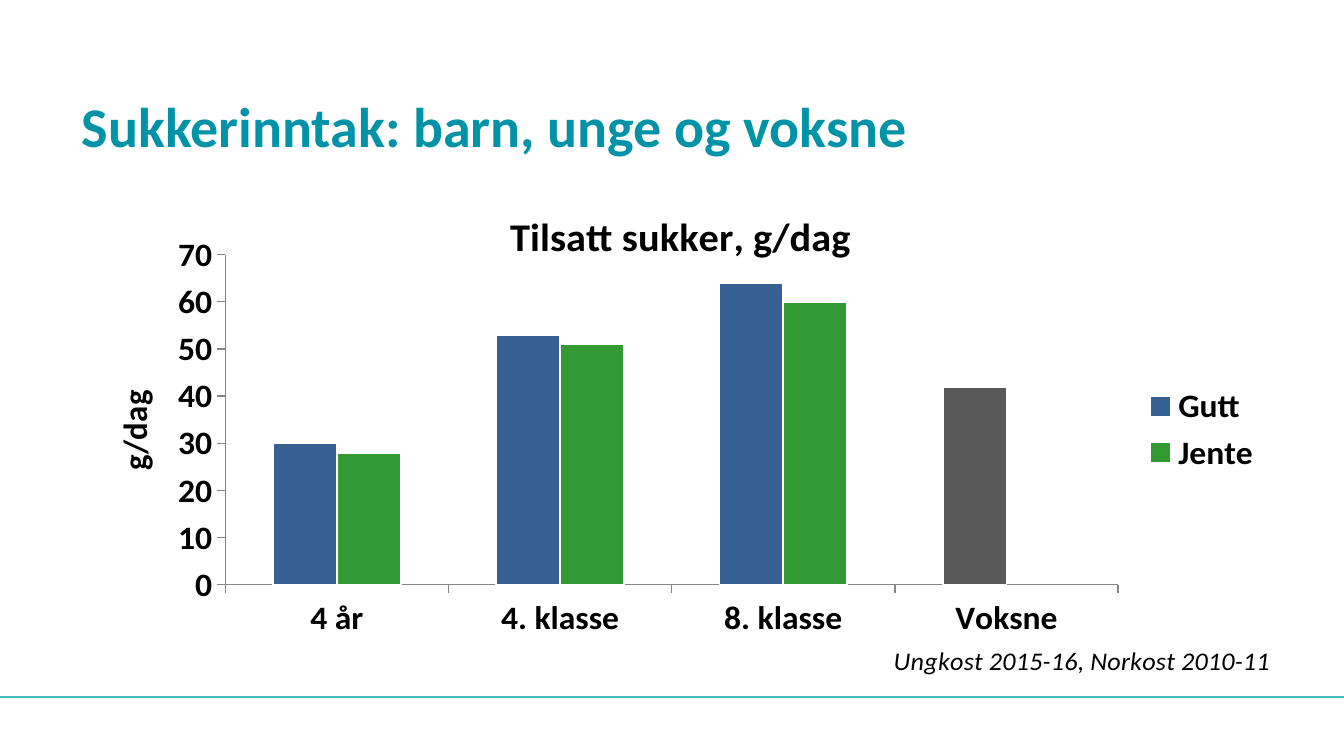
"""Build a slide with a column chart of added sugar intake by age group."""
from lxml.etree import SubElement
from pptx import Presentation
from pptx.chart.data import CategoryChartData as ChartData
from pptx.dml.color import RGBColor
from pptx.enum.chart import XL_CHART_TYPE as ChartType
from pptx.enum.chart import XL_LEGEND_POSITION as LegendPosition
from pptx.enum.chart import XL_TICK_MARK as TickMark
from pptx.enum.shapes import MSO_CONNECTOR as Connector
from pptx.enum.text import MSO_ANCHOR as Anchor
from pptx.enum.text import PP_ALIGN as Align
from pptx.oxml.ns import qn
from pptx.util import Pt

TEAL = RGBColor(0x00, 0x93, 0xA7)
TURQUOISE = RGBColor(0x43, 0xBC, 0xBA)
BLACK = RGBColor(0x00, 0x00, 0x00)
WHITE = RGBColor(0xFF, 0xFF, 0xFF)
AXIS_GREY = RGBColor(0x86, 0x86, 0x86)
BOY_BLUE = RGBColor(0x37, 0x60, 0x92)
GIRL_GREEN = RGBColor(0x33, 0x99, 0x33)
ADULT_GREY = RGBColor(0x59, 0x59, 0x59)

WIDTH, HEIGHT = 720, 405
GROUPS = ["4 år", "4. klasse", "8. klasse", "Voksne"]
SERIES = [
    ("Gutt", (30, 53, 64, 42), BOY_BLUE),
    ("Jente", (28, 51, 60, None), GIRL_GREEN),
]


def style_font(font, size=18, color=BLACK, bold=True, italic=False):
    font.name, font.size = "Calibri", Pt(size)
    font.bold, font.italic = bold, italic
    font.color.rgb = color


def write_text(frame, text, align=None, **style):
    para = frame.paragraphs[0]
    para.alignment = align
    span = para.add_run()
    span.text = text
    style_font(span.font, **style)


def set_layout(parent, index, **values):
    for old in parent.findall(qn("c:layout")):
        parent.remove(old)
    layout = SubElement(parent, qn("c:layout"))
    parent.insert(index, layout)
    manual = SubElement(layout, qn("c:manualLayout"))
    for name, value in values.items():
        SubElement(manual, qn(f"c:{name}")).set("val", str(value))


class SlideBuilder:
    def __init__(self, deck):
        self.page = deck.slides.add_slide(deck.slide_layouts[5])

    def rule(self, y, color):
        line = self.page.shapes.add_connector(
            Connector.STRAIGHT, Pt(0), Pt(y), Pt(WIDTH), Pt(y))
        line.line.color.rgb, line.line.width = color, Pt(1)
        SubElement(line.element.spPr, qn("a:effectLst"))

    def title(self, text, left, top, width, height):
        box = self.page.shapes.title
        box.left, box.top, box.width, box.height = map(
            Pt, (left, top, width, height))
        box.text_frame.vertical_anchor = Anchor.BOTTOM
        write_text(box.text_frame, text, Align.LEFT, size=30, color=TEAL)

    def chart_title(self, title, text, x, y, **style):
        write_text(title.text_frame, text, **style)
        set_layout(title.element, 1, xMode="edge", yMode="edge", x=x, y=y)

    def axis(self, axis):
        axis.has_major_gridlines = False
        axis.major_tick_mark = TickMark.OUTSIDE
        axis.minor_tick_mark = TickMark.NONE
        axis.format.line.color.rgb = AXIS_GREY
        axis.format.line.width = Pt(0.75)

    def column_chart(self, left, top, width, height):
        data = ChartData()
        data.categories = GROUPS
        for name, values, _ in SERIES:
            data.add_series(name, values)
        chart = self.page.shapes.add_chart(
            ChartType.COLUMN_CLUSTERED,
            *map(Pt, (left, top, width, height)), data).chart
        style_font(chart.font)
        plot = chart.plots[0]
        plot.gap_width, plot.overlap = 150, 0
        plot.vary_by_categories = False
        for series, (_, _, color) in zip(plot.series, SERIES):
            self.column_format(series.format, color)
        self.column_format(plot.series[0].points[3].format, ADULT_GREY)

        for axis in (chart.category_axis, chart.value_axis):
            self.axis(axis)
        scale = chart.value_axis
        scale.minimum_scale, scale.maximum_scale, scale.major_unit = 0, 70, 10
        chart.has_legend = True
        chart.legend.position = LegendPosition.RIGHT
        chart.legend.include_in_layout = False

        self.chart_title(chart.chart_title, "Tilsatt sukker, g/dag",
                         0.36, 0.03, size=21.6)
        self.chart_title(scale.axis_title, "g/dag", 0.03, 0.41)
        self.chart_title(chart.category_axis.axis_title,
                         "Ungkost 2015-16, Norkost 2010-11",
                         0.68, 0.93, size=14, bold=False, italic=True)
        area = chart.element.find(".//" + qn("c:plotArea"))
        set_layout(area, 0, layoutTarget="inner", xMode="edge", yMode="edge",
                   x=0.13, y=0.14, w=0.74, h=0.68)

    def column_format(self, style, color):
        style.fill.solid()
        style.fill.fore_color.rgb = color
        style.line.color.rgb, style.line.width = WHITE, Pt(1)


def main():
    deck = Presentation()
    deck.slide_width, deck.slide_height = Pt(WIDTH), Pt(HEIGHT)
    builder = SlideBuilder(deck)
    builder.rule(373.5, TURQUOISE)
    builder.title("Sukkerinntak: barn, unge og voksne", 36.7, 39.6, 646.6, 49)
    builder.column_chart(36.7, 100, 646.6, 267)
    deck.save("out.pptx")


if __name__ == "__main__":
    main()
